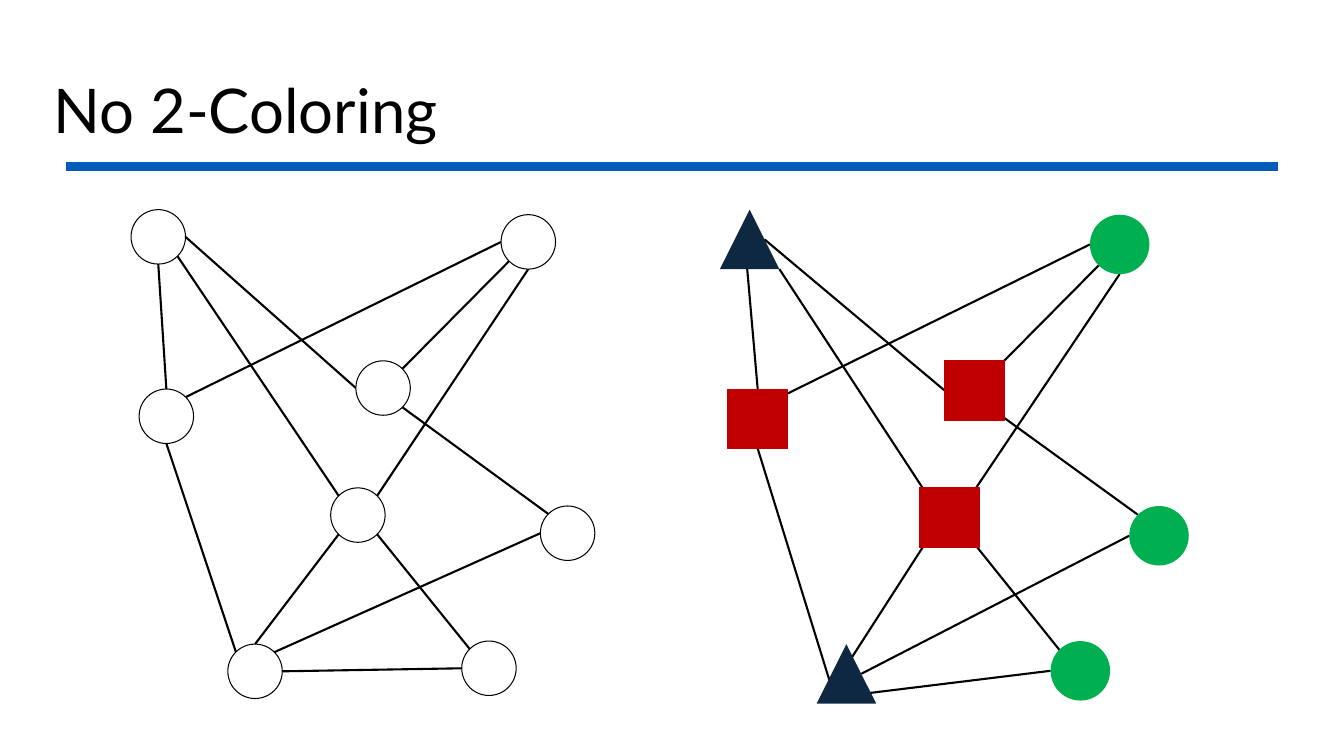
from lxml import etree
from pptx import Presentation
from pptx.dml.color import RGBColor
from pptx.enum.shapes import MSO_CONNECTOR, MSO_SHAPE
from pptx.enum.text import MSO_ANCHOR, PP_ALIGN
from pptx.oxml.ns import qn
from pptx.util import Inches, Pt

STRAIGHT = MSO_CONNECTOR.STRAIGHT
OVAL = MSO_SHAPE.OVAL
SQUARE = MSO_SHAPE.RECTANGLE
TRIANGLE = MSO_SHAPE.ISOSCELES_TRIANGLE
BLACK = RGBColor(0x00, 0x00, 0x00)
WHITE = RGBColor(0xFF, 0xFF, 0xFF)
BLUE = RGBColor(0x00, 0x5B, 0xBC)
NAVY = RGBColor(0x0E, 0x28, 0x41)
RED = RGBColor(0xC0, 0x00, 0x00)
GREEN = RGBColor(0x00, 0xB0, 0x50)

TITLE = "No 2-Coloring"
NODES = {
    "A": (1.30, 2.08),
    "B": (3.53, 3.58),
    "C": (1.38, 3.86),
    "D": (3.28, 4.84),
    "F": (2.26, 6.39),
    "G": (4.58, 6.36),
    "H": (5.36, 5.02),
    "I": (4.97, 2.13),
}
EDGES = [
    ("A", "S", "C", "N"),
    ("A", "E", "B", "W"),
    ("A", "SE", "D", "NW"),
    ("F", "N", "D", "SW"),
    ("F", "E", "G", "W"),
    ("G", "NW", "D", "SE"),
    ("H", "W", "F", "NE"),
    ("B", "SE", "H", "NW"),
    ("D", "NE", "I", "S"),
    ("C", "NE", "I", "W"),
    ("C", "S", "F", "NW"),
    ("B", "NE", "I", "SW"),
]
SITES = {
    "N": (0.5, 0), "S": (0.5, 1), "W": (0, 0.5), "E": (1, 0.5),
    "NW": (0.15, 0.15), "NE": (0.85, 0.15),
    "SW": (0.15, 0.85), "SE": (0.85, 0.85),
}
TRIANGLE_SITES = {
    ("A", "S"): (0.46, 1),
    ("A", "E"): (0.75, 0.5),
    ("A", "SE"): (1, 1),
    ("F", "N"): (0.42, 0.49),
    ("F", "E"): (0.58, 0.86),
    ("F", "NE"): (0.75, 0.5),
    ("F", "NW"): (0.32, 0.95),
}
PLAIN = (OVAL, WHITE, BLACK)
COLORS = {
    "triangle": (TRIANGLE, NAVY, None),
    "square": (SQUARE, RED, RED),
    "circle": (OVAL, GREEN, None),
}
COLORING = {
    "A": "triangle", "F": "triangle",
    "B": "square", "C": "square", "D": "square",
    "G": "circle", "H": "circle", "I": "circle",
}
GRAPHS = [
    {"offset": 0, "size": 0.54, "styles": {name: PLAIN for name in NODES}},
    {"offset": 5.84, "size": 0.59,
     "styles": {name: COLORS[color] for name, color in COLORING.items()}},
]


def add_line(slide, start, end, color, width):
    connector = slide.shapes.add_connector(
        STRAIGHT, *(Inches(value) for value in (*start, *end)))
    connector.line.color.rgb = color
    connector.line.width = Pt(width)
    etree.SubElement(connector._element.spPr, qn("a:effectLst"))


def site_point(graph, name, site):
    x, y = SITES[site]
    if graph["styles"][name][0] == TRIANGLE:
        x, y = TRIANGLE_SITES[name, site]
    left, top = NODES[name]
    return left + graph["offset"] + x * graph["size"], top + y * graph["size"]


def add_node(slide, graph, name):
    preset, fill, outline = graph["styles"][name]
    left, top = NODES[name]
    size = Inches(graph["size"])
    node = slide.shapes.add_shape(
        preset, Inches(left + graph["offset"]), Inches(top), size, size)
    node.shadow.inherit = False
    node.fill.solid()
    node.fill.fore_color.rgb = fill
    if outline is None:
        node.line.fill.background()
    else:
        node.line.color.rgb = outline
        node.line.width = Pt(0.75)


def add_title(slide):
    title = slide.shapes.title
    title.left, title.top = Inches(0.43), Inches(0.4)
    title.width, title.height = Inches(12.71), Inches(1.45)
    title.text_frame.text = TITLE
    title.text_frame.vertical_anchor = MSO_ANCHOR.MIDDLE
    paragraph = title.text_frame.paragraphs[0]
    paragraph.alignment = PP_ALIGN.LEFT
    paragraph.line_spacing = 0.9
    font = paragraph.runs[0].font
    font.name = "Lato"
    font.size = Pt(44)
    font.color.rgb = BLACK


def main():
    presentation = Presentation()
    presentation.slide_width = Inches(13.33)
    presentation.slide_height = Inches(7.5)
    slide = presentation.slides.add_slide(presentation.slide_layouts[5])
    add_title(slide)
    add_line(slide, (0.65, 1.65), (12.68, 1.65), BLUE, 6)
    for graph in GRAPHS:
        for first, first_site, second, second_site in EDGES:
            add_line(slide, site_point(graph, first, first_site),
                     site_point(graph, second, second_site), BLACK, 1.5)
        for name in NODES:
            add_node(slide, graph, name)
    presentation.save("out.pptx")


if __name__ == "__main__":
    main()
